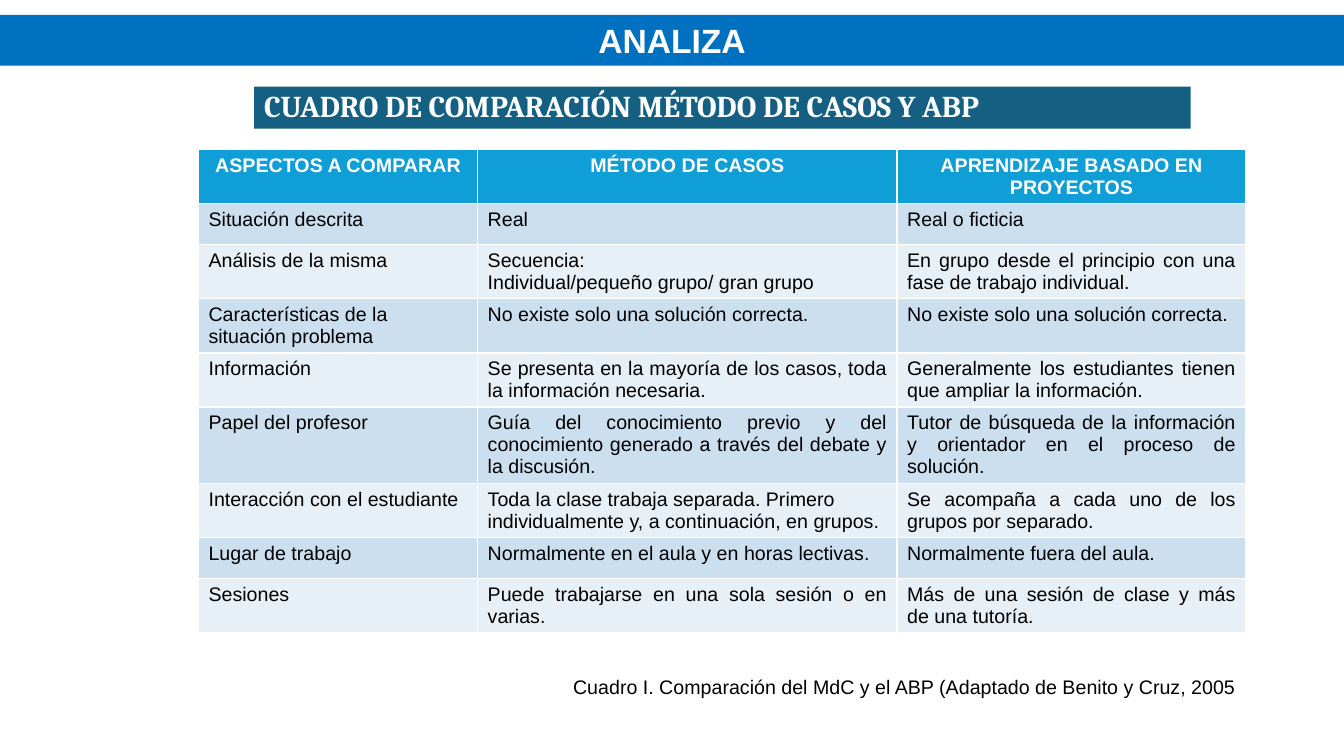
import pptx
import pptx.util
import pptx.dml.color
import pptx.enum.shapes
import pptx.enum.text

Pt = pptx.util.Pt
Align = pptx.enum.text.PP_ALIGN
Anchor = pptx.enum.text.MSO_ANCHOR
Rect = pptx.enum.shapes.MSO_SHAPE.RECTANGLE

colors = {
    "white": "FFFFFF",
    "black": "000000",
    "blue": "0070C0",
    "teal": "156082",
    "head": "0F9ED5",
    "dark": "CCDFEF",
    "light": "E7F0F7",
}


def paint(item, name):
    item.fill.solid()
    item.fill.fore_color.rgb = pptx.dml.color.RGBColor.from_string(colors[name])


def write(frame, text, size=14, font="Arial", color="black", bold=False, align=Align.LEFT, space=1.0):
    frame.word_wrap = True
    frame.text = text
    for para in frame.paragraphs:
        para.alignment = align
        para.line_spacing = space
        for run in para.runs:
            run.font.size = Pt(size)
            run.font.name = font
            run.font.bold = bold
            run.font.color.rgb = pptx.dml.color.RGBColor.from_string(colors[color])


deck = pptx.Presentation()
deck.slide_width = Pt(960)
deck.slide_height = Pt(540)
slide = deck.slides.add_slide(deck.slide_layouts[6])

bars = [
    ("CUADRO DE COMPARACIÓN MÉTODO DE CASOS Y ABP", (181.5, 61.8, 669, 30.2), "teal",
     dict(size=21.6, font="Cambria", space=0.9)),
    ("ANALIZA", (0, 10.6, 960, 36.4), "blue", dict(size=24, align=Align.CENTER)),
]
for text, place, fill, style in bars:
    bar = slide.shapes.add_shape(Rect, *map(Pt, place))
    bar.shadow.inherit = False
    bar.line.fill.background()
    paint(bar, fill)
    bar.text_frame.vertical_anchor = Anchor.MIDDLE
    write(bar.text_frame, text, color="white", bold=True, **style)

rows = [
    ("ASPECTOS A COMPARAR", "MÉTODO DE CASOS", "APRENDIZAJE BASADO EN PROYECTOS"),
    ("Situación descrita", "Real", "Real o ficticia"),
    ("Análisis de la misma",
     "Secuencia:\nIndividual/pequeño grupo/ gran grupo",
     "En grupo desde el principio con una fase de trabajo individual."),
    ("Características de la situación problema",
     "No existe solo una solución correcta.",
     "No existe solo una solución correcta."),
    ("Información",
     "Se presenta en la mayoría de los casos, toda la información necesaria.",
     "Generalmente los estudiantes tienen que ampliar la información."),
    ("Papel del profesor",
     "Guía del conocimiento previo y del conocimiento generado a través del debate y la discusión.",
     "Tutor de búsqueda de la información y orientador en el proceso de solución."),
    ("Interacción con el estudiante",
     "Toda la clase trabaja separada. Primero individualmente y, a continuación, en grupos.",
     "Se acompaña a cada uno de los grupos por separado."),
    ("Lugar de trabajo",
     "Normalmente en el aula y en horas lectivas.",
     "Normalmente fuera del aula."),
    ("Sesiones",
     "Puede trabajarse en una sola sesión o en varias.",
     "Más de una sesión de clase y más de una tutoría."),
]
left = {(1, 1), (1, 2), (6, 1), (7, 2)}
widths = [199.4, 299.6, 249.2]
high = 29.2

table = slide.shapes.add_table(
    len(rows), len(widths), Pt(141.8), Pt(106.8), Pt(sum(widths)), Pt(high * len(rows))
).table
for column, width in zip(table.columns, widths):
    column.width = Pt(width)
for r, row in enumerate(rows):
    table.rows[r].height = Pt(high)
    for c, text in enumerate(row):
        cell = table.cell(r, c)
        if r == 0:
            paint(cell, "head")
            write(cell.text_frame, text, color="white", bold=True, align=Align.CENTER)
        else:
            paint(cell, "dark" if r % 2 else "light")
            plain = c == 0 or (r, c) in left
            write(cell.text_frame, text, align=Align.LEFT if plain else Align.JUSTIFY)

note = slide.shapes.add_textbox(Pt(402.3), Pt(478.4), Pt(499), Pt(24.2))
write(note.text_frame, "Cuadro I. Comparación del MdC y el ABP (Adaptado de Benito y Cruz, 2005")

deck.save("out.pptx")
